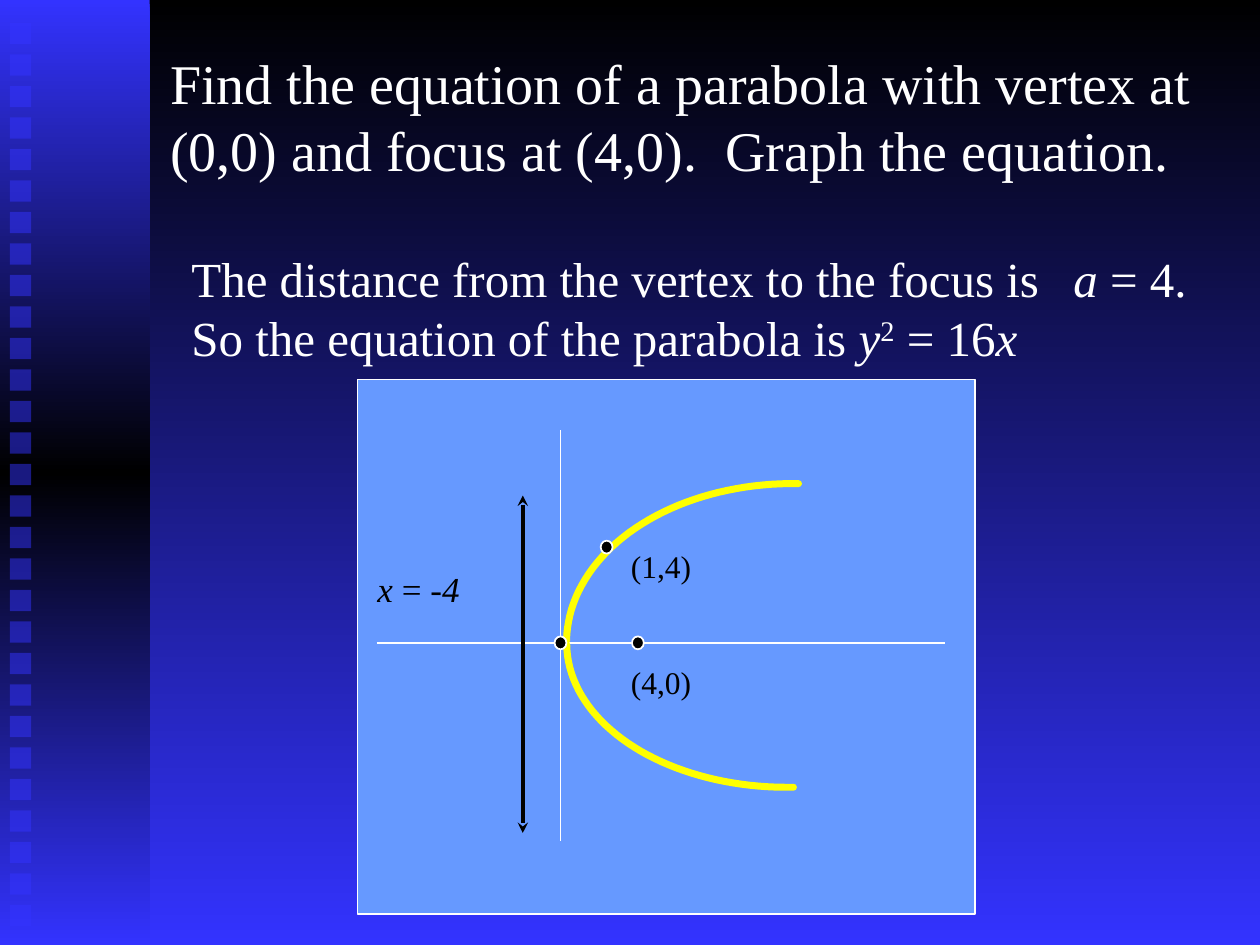
from copy import deepcopy
from math import cos, pi, sin

from pptx import Presentation
from pptx.dml.color import RGBColor
from pptx.enum.shapes import MSO_CONNECTOR as Link, MSO_SHAPE as Kind
from pptx.enum.text import MSO_ANCHOR as Anchor, MSO_AUTO_SIZE as Fit, PP_ALIGN as Align
from pptx.oxml.ns import qn
from pptx.oxml.xmlchemy import OxmlElement as Node
from pptx.util import Cm, Pt

BLUE, BLACK, WHITE, YELLOW, SKY = "3333FF", "000000", "FFFFFF", "FFFF00", "6699FF"
PLAIN = dict(name="Times New Roman", bold=False, italic=False)
FRAME = dict(word_wrap=True, auto_size=Fit.NONE, vertical_anchor=Anchor.TOP,
             margin_left=Cm(0.25), margin_right=Cm(0.25),
             margin_top=Cm(0.13), margin_bottom=Cm(0.13))
PARA = dict(alignment=Align.LEFT, space_before=Pt(0), line_spacing=1.0)


def hue(code):
    return RGBColor.from_string(code)


def apply(item, values):
    for key, value in values.items():
        setattr(item, key, value)


def place(shape, box):
    apply(shape, dict(zip(("left", "top", "width", "height"), map(Cm, box))))


def add(parent, tag, **attrs):
    node = Node(tag)
    for key, value in attrs.items():
        node.set(key, str(value))
    parent.append(node)
    return node


def grade(fill, root, codes):
    """Vertical gradient with evenly spaced stops."""
    fill.gradient()
    fill.gradient_angle = 270
    stops = next(root.iter(qn("a:gsLst")))
    for _ in codes[2:]:
        stops.append(deepcopy(stops[0]))
    for i, (stop, code) in enumerate(zip(fill.gradient_stops, codes)):
        stop.color.rgb = hue(code)
        stop.position = i / (len(codes) - 1)


def stroke(line, code, width):
    line.color.rgb = hue(code)
    line.width = Pt(width)


def block(slide, kind, box, fill=None, edge=None):
    shape = slide.shapes.add_shape(kind, *map(Cm, box))
    shape.shadow.inherit = False
    if fill:
        shape.fill.solid()
        shape.fill.fore_color.rgb = hue(fill)
    if edge:
        stroke(shape.line, edge, 1)
    else:
        shape.line.fill.background()
    return shape


def rule(slide, ends, code, width):
    line = slide.shapes.add_connector(Link.STRAIGHT, *map(Cm, ends))
    stroke(line.line, code, width)
    add(line._element.spPr, "a:effectLst")
    return line


def write(shape, runs, size, code):
    """Fill the shape with one paragraph of (text, format) runs."""
    frame = shape.text_frame
    apply(frame, FRAME)
    para = frame.paragraphs[0]
    apply(para, PARA)
    for text, extra in runs:
        run = para.add_run()
        run.text = text
        apply(run.font, {**PLAIN, "size": Pt(size), **extra})
        run.font.color.rgb = hue(code)
    return para


def rail(slide, x, y, w, h):
    # Side band
    band = block(slide, Kind.RECTANGLE, (x, y, w, h))
    grade(band.fill, band._element, (BLUE, BLACK, BLUE))
    # Column of translucent squares
    for i in range(29):
        box = (x + 0.2, y + 0.46 + 0.635 * i, 0.43, 0.43)
        tile = block(slide, Kind.RECTANGLE, box, BLUE)
        add(next(tile._element.spPr.iter(qn("a:srgbClr"))), "a:alpha", val=50000)


def heading(slide, *box):
    title = slide.shapes.title
    place(title, box)
    text = ("Find the equation of a parabola with vertex at (0,0) "
            "and focus at (4,0).  Graph the equation.")
    write(title, [(text, {})], 32, WHITE)


def answer(slide, *box):
    body = slide.placeholders[1]
    place(body, box)
    slant = dict(italic=True)
    para = write(body, [
        ("The distance from the vertex to the focus is\t", {}), ("a", slant),
        (" = 4. So the equation of the parabola is ", {}), ("y", slant),
        ("2", {}), (" = 16", {}), ("x", slant)], 28, WHITE)
    para.runs[4].font._element.set("baseline", "30000")
    # No bullet, one tab stop before "a"
    props = para._p.get_or_add_pPr()
    apply_indent = dict(marL="0", indent="0")
    for key, value in apply_indent.items():
        props.set(key, value)
    add(props, "a:buNone")
    add(add(props, "a:tabLst"), "a:tab", pos=int(Cm(18.31)), algn="l")


def branch(slide, x, y, w, h, turn):
    """Quarter ellipse from (x, y) to (x + w, y + h); h < 0 rises."""
    steps = 40
    dots = [(Cm(x + w * (1 - cos(t))), Cm(y + h * sin(t)))
            for t in (pi / 2 * i / steps for i in range(steps + 1))]
    pen = slide.shapes.build_freeform(*dots[0])
    pen.add_line_segments(dots[1:], close=False)
    curve = pen.convert_to_shape()
    curve.shadow.inherit = False
    curve.fill.background()
    stroke(curve.line, YELLOW, 4)
    curve.line._get_or_add_ln().set("cap", "rnd")
    curve.rotation = turn


def graph(slide, x, y, w, h):
    block(slide, Kind.RECTANGLE, (x, y, w, h), SKY, WHITE)
    ox, oy = x + 4.09, y + 5.31
    # Axes
    rule(slide, (ox, y + 1.02, ox, y + 9.3), WHITE, 1)
    rule(slide, (x + 0.38, oy, x + 11.84, oy), WHITE, 1)
    # Parabola
    branch(slide, x + 4.24, oy, 4.62, -3.25, 1)
    branch(slide, x + 4.24, oy, 4.52, 2.95, -1)
    # Directrix
    line = rule(slide, (x + 3.33, y + 2.34, x + 3.33, y + 9.14), BLACK, 2)
    for tag in ("a:headEnd", "a:tailEnd"):
        add(line.line._get_or_add_ln(), tag, type="stealth")
    # Vertex, focus and curve point
    for cx, cy in ((ox, oy), (x + 5.65, oy), (x + 5.02, y + 3.38)):
        block(slide, Kind.OVAL, (cx - 0.12, cy - 0.13, 0.24, 0.26), BLACK, WHITE)
    # Labels
    slant = dict(italic=True)
    for dx, dy, wide, tall, size, runs in (
            (0.15, 3.66, 2.92, 1.09, 20, [("x", slant), (" = -", {}), ("4", slant)]),
            (5.26, 5.59, 3.38, 1.02, 18, [("(4,0)", {})]),
            (5.26, 3.25, 3.63, 1.02, 18, [("(1,4)", {})])):
        note = slide.shapes.add_textbox(*map(Cm, (x + dx, y + dy, wide, tall)))
        write(note, runs, size, BLACK)


def main():
    deck = Presentation()
    deck.slide_width, deck.slide_height = Cm(25.4), Cm(19.05)
    slide = deck.slides.add_slide(deck.slide_layouts[1])
    grade(slide.background.fill, slide._element, (BLACK, BLUE))
    rail(slide, 0, 0, 3.02, 19.05)
    heading(slide, 3.18, 0.84, 21.59, 2.97)
    answer(slide, 3.61, 4.88, 21.79, 2.62)
    graph(slide, 7.21, 7.65, 12.45, 10.77)
    deck.save("out.pptx")


if __name__ == "__main__":
    main()
